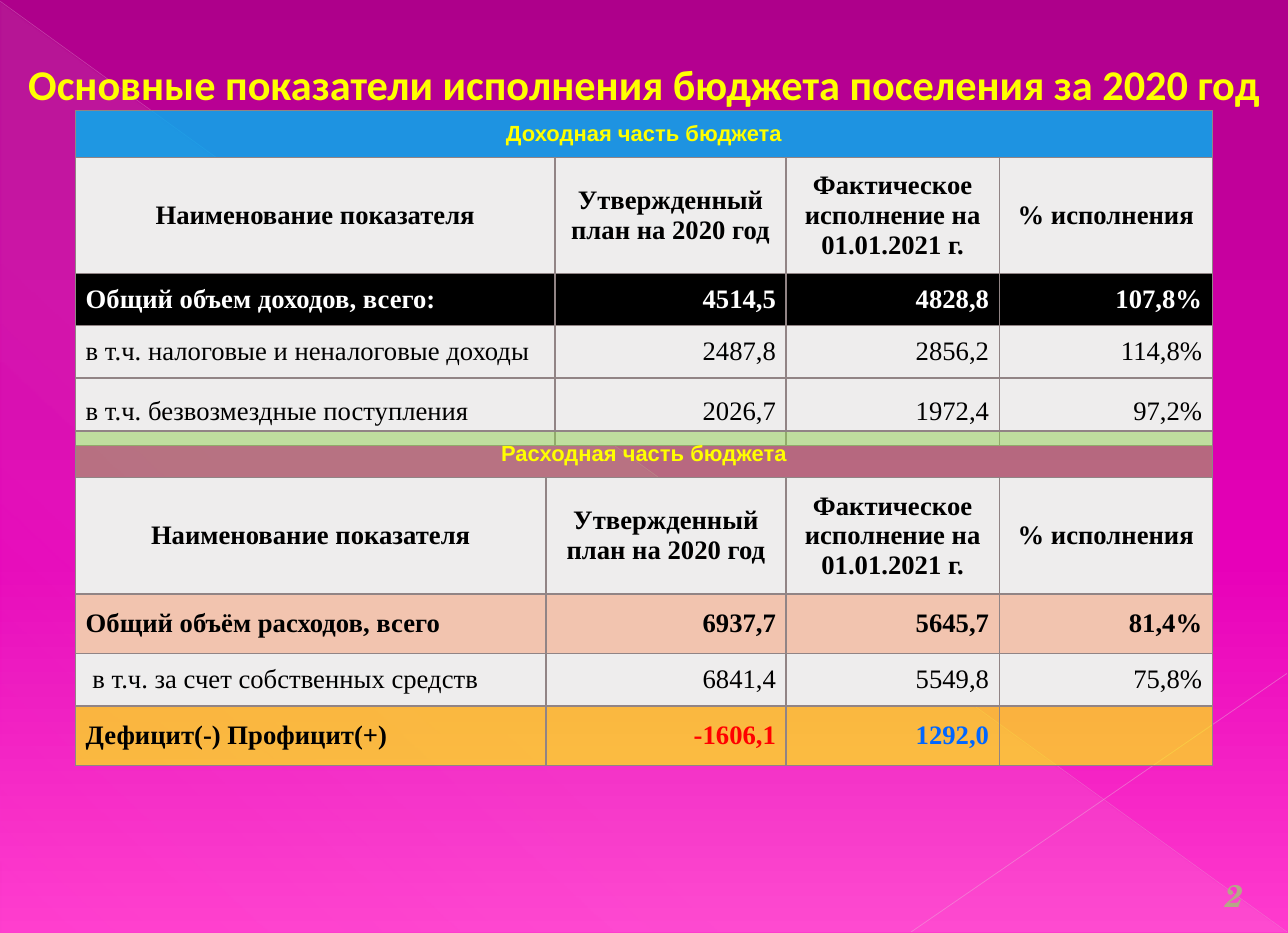
from pptx import Presentation
from pptx.dml.color import RGBColor
from pptx.enum.shapes import MSO_CONNECTOR, MSO_SHAPE
from pptx.enum.text import MSO_ANCHOR, PP_ALIGN
from pptx.oxml import parse_xml
from pptx.oxml.ns import nsdecls, qn
from pptx.util import Inches, Pt

DEEP = RGBColor(0xAE, 0x00, 0x8B)
PINK = RGBColor(0xE7, 0x00, 0xB9)
LIGHT = RGBColor(0xFF, 0x3B, 0xCE)
MIST = RGBColor(0xF4, 0xE7, 0xED)
ROSE = RGBColor(0xE9, 0xA8, 0xD7)
MAUVE = RGBColor(0xEB, 0xB2, 0xDB)
SAND = RGBColor(0xB5, 0xA7, 0x88)
YELLOW = RGBColor(0xFF, 0xFF, 0x00)
SKY = RGBColor(0x00, 0xB0, 0xF0)
GREEN = RGBColor(0x92, 0xD0, 0x50)
GREY = RGBColor(0xEE, 0xED, 0xED)
PEACH = RGBColor(0xF2, 0xC4, 0xAF)
BLACK = RGBColor(0x00, 0x00, 0x00)
WHITE = RGBColor(0xFF, 0xFF, 0xFF)
RED = RGBColor(0xFF, 0x00, 0x00)
BLUE = RGBColor(0x00, 0x66, 0xFF)
BORDER = RGBColor(0x91, 0x84, 0x85)


def paint(node, fill, stops, angle=0):
    """Fill with (position, colour, opacity) stops; a single stop is solid."""
    fill.solid()
    old = node.find(".//" + qn("a:solidFill"))
    tints = [f'<a:srgbClr val="{tint}"><a:alpha val="{alpha * 1000}"/></a:srgbClr>'
             for _, tint, alpha in stops]
    if len(stops) == 1:
        xml = f'<a:solidFill {nsdecls("a")}>{tints[0]}</a:solidFill>'
    else:
        marks = "".join(f'<a:gs pos="{stop[0] * 1000}">{tint}</a:gs>'
                        for stop, tint in zip(stops, tints))
        xml = (f'<a:gradFill {nsdecls("a")} rotWithShape="1"><a:gsLst>{marks}</a:gsLst>'
               f'<a:lin ang="{angle * 60000}" scaled="0"/></a:gradFill>')
    old.getparent().replace(old, parse_xml(xml))


def write(frame, text, size=17, font="Times New Roman", color=BLACK, bold=True,
          italic=False, align=PP_ALIGN.CENTER, spacing=None):
    para = frame.paragraphs[0]
    para.alignment = align
    if spacing:
        para.line_spacing = spacing
    run = para.add_run()
    run.text = text
    run.font.size = Pt(size)
    run.font.name = font
    run.font.bold = bold
    run.font.italic = italic
    run.font.color.rgb = color


prs = Presentation()
prs.slide_width = Inches(11.42)
prs.slide_height = Inches(8.27)
slide = prs.slides.add_slide(prs.slide_layouts[6])
paint(slide._element, slide.background.fill,
      [(0, DEEP, 100), (60, PINK, 100), (100, LIGHT, 100)], 90)

# Backdrop
wedge = slide.shapes.add_shape(MSO_SHAPE.RIGHT_TRIANGLE, Inches(0.01), Inches(0.02),
                               Inches(11.4), Inches(8.24))
wedge.shadow.inherit = False
wedge.line.fill.background()
paint(wedge._element, wedge.fill, [(0, MIST, 10), (70, MIST, 8), (100, MIST, 1)], 133)

for ends, tint, width, alpha in [((0, 0.01, 11.41, 8.26), ROSE, 0.39, 35),
                                 ((11.41, 5.97, 8.08, 8.26), MAUVE, 0.47, 45)]:
    line = slide.shapes.add_connector(MSO_CONNECTOR.STRAIGHT, *map(Inches, ends))
    line.line.width = Pt(width)
    paint(line._element, line.line.fill, [(0, tint, alpha)])
    line._element.spPr.append(parse_xml(f'<a:effectLst {nsdecls("a")}/>'))

# Title and page number
TITLE = "Основные показатели исполнения бюджета поселения за 2020 год"
for place, anchor, text, style in [
    ((10.66, 7.72, 0.57, 0.44), MSO_ANCHOR.BOTTOM, "2",
     dict(size=20, font="TeX Gyre Schola", color=SAND, italic=True, spacing=0.9)),
    ((0, 0.56, 11.42, 0.44), MSO_ANCHOR.MIDDLE, TITLE,
     dict(size=27, font="Calibri", color=YELLOW, spacing=0.8)),
]:
    frame = slide.shapes.add_textbox(*map(Inches, place)).text_frame
    frame.word_wrap = True
    frame.vertical_anchor = anchor
    frame.margin_left = frame.margin_right = Inches(0.11)
    frame.margin_top = frame.margin_bottom = Inches(0.06)
    write(frame, text, **style)

# Each row: height, fill, opacity, font colour, bold, texts
HEAD = (1.02, GREY, 100, BLACK, True,
        ["Наименование показателя", "Утвержденный план на 2020 год",
         "Фактическое исполнение на 01.01.2021 г.", "% исполнения"])
INCOME = [
    (0.41, SKY, 84, YELLOW, True, ["Доходная часть бюджета", "", "", ""]),
    HEAD,
    (0.46, BLACK, 100, WHITE, True,
     ["Общий объем доходов, всего:", "4514,5", "4828,8", "107,8%"]),
    (0.46, GREY, 100, BLACK, False,
     ["в т.ч. налоговые и неналоговые доходы", "2487,8", "2856,2", "114,8%"]),
    (0.6, GREY, 100, BLACK, False,
     ["в т.ч. безвозмездные поступления", "2026,7", "1972,4", "97,2%"]),
]
SPENDING = [
    (0.41, GREEN, 50, YELLOW, True, ["Расходная часть бюджета", "", "", ""]),
    HEAD,
    (0.53, PEACH, 100, BLACK, True,
     ["Общий объём расходов, всего", "6937,7", "5645,7", "81,4%"]),
    (0.46, GREY, 100, BLACK, False,
     [" в т.ч. за счет собственных средств", "6841,4", "5549,8", "75,8%"]),
    (0.53, YELLOW, 67, BLACK, True,
     ["Дефицит(-) Профицит(+)", "-1606,1", "1292,0", ""]),
]
ACCENTS = {"-1606,1": RED, "1292,0": BLUE}

for top, widths, rows in [(0.98, (4.25, 2.05, 1.89, 1.89), INCOME),
                          (3.82, (4.17, 2.13, 1.89, 1.89), SPENDING)]:
    table = slide.shapes.add_table(len(rows), len(widths), Inches(0.67), Inches(top),
                                   Inches(sum(widths)),
                                   Inches(sum(row[0] for row in rows))).table
    table.first_row = table.horz_banding = False
    for col, width in zip(table.columns, widths):
        col.width = Inches(width)
    table.cell(0, 0).merge(table.cell(0, len(widths) - 1))
    for r, (height, tint, alpha, color, bold, texts) in enumerate(rows):
        table.rows[r].height = Inches(height)
        for c, text in enumerate(texts):
            cell = table.cell(r, c)
            cell.vertical_anchor = MSO_ANCHOR.MIDDLE
            cell.margin_left = cell.margin_right = Inches(0.09)
            cell.margin_top = cell.margin_bottom = Inches(0.09)
            paint(cell._tc, cell.fill, [(0, tint, alpha)])
            for i, side in enumerate("LRTB"):
                cell._tc.tcPr.insert(i, parse_xml(
                    f'<a:ln{side} {nsdecls("a")} w="12700"><a:solidFill>'
                    f'<a:srgbClr val="{BORDER}"/></a:solidFill></a:ln{side}>'))
            if r < 2:
                align = PP_ALIGN.CENTER
            else:
                align = PP_ALIGN.RIGHT if c else PP_ALIGN.LEFT
            write(cell.text_frame, text, size=17 if r else 14,
                  font="Times New Roman" if r else "Arial",
                  color=ACCENTS.get(text, color), bold=bold, align=align)

prs.save("out.pptx")
